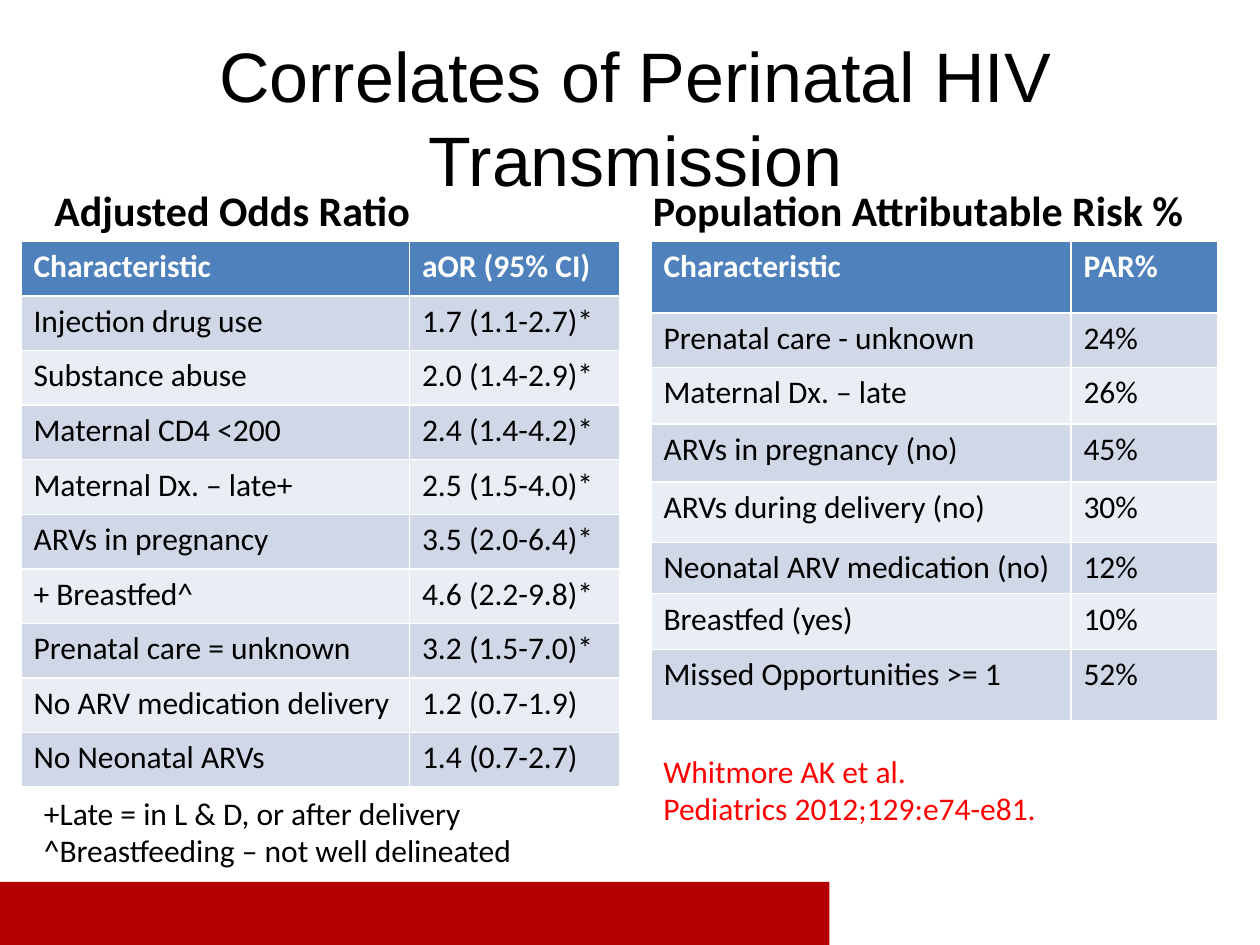
from pptx import Presentation
from pptx.dml.color import RGBColor
from pptx.enum.shapes import MSO_SHAPE
from pptx.enum.text import MSO_ANCHOR, PP_ALIGN
from pptx.util import Inches, Pt

RECTANGLE = MSO_SHAPE.RECTANGLE
TOP, MIDDLE, BOTTOM = MSO_ANCHOR.TOP, MSO_ANCHOR.MIDDLE, MSO_ANCHOR.BOTTOM
LEFT, CENTER = PP_ALIGN.LEFT, PP_ALIGN.CENTER

BLACK = RGBColor(0x00, 0x00, 0x00)
WHITE = RGBColor(0xFF, 0xFF, 0xFF)
CITATION_RED = RGBColor(0xFF, 0x00, 0x00)
FOOTER_RED = RGBColor(0xB4, 0x00, 0x00)
HEADER_BLUE = RGBColor(0x4F, 0x81, 0xBD)
BANDS = [RGBColor(0xE9, 0xED, 0xF4), RGBColor(0xD0, 0xD8, 0xE8)]

# The layout sits on a grid of 12 cells to the inch: 120 columns by 90 rows.
CELL = Inches(1) / 12
TABLE_ROW = 23


def grid(*cells):
    return [round(cell * CELL) for cell in cells]


def write(paragraph, text, color, formats):
    paragraph.text = text
    paragraph.font.color.rgb = color
    for name, value in formats.items():
        setattr(paragraph.font, name, value)


TITLE = {"name": "Arial", "size": Pt(40), "bold": False}
HEADING = {"name": "Calibri", "size": Pt(24), "bold": True}
HEADER = {"name": "Calibri", "size": Pt(18), "bold": True}
BODY = {"name": "Calibri", "size": Pt(18), "bold": False}

odds_ratios = [
    ("Characteristic", "aOR (95% CI)"),
    ("Injection drug use", "1.7 (1.1-2.7)*"),
    ("Substance abuse", "2.0 (1.4-2.9)*"),
    ("Maternal CD4 <200", "2.4 (1.4-4.2)*"),
    ("Maternal Dx. – late+", "2.5 (1.5-4.0)*"),
    ("ARVs in pregnancy", "3.5 (2.0-6.4)*"),
    ("+ Breastfed^", "4.6 (2.2-9.8)*"),
    ("Prenatal care = unknown", "3.2 (1.5-7.0)*"),
    ("No ARV medication delivery", "1.2 (0.7-1.9)"),
    ("No Neonatal ARVs", "1.4 (0.7-2.7)"),
]
attributable_risks = [
    ("Characteristic", "PAR%"),
    ("Prenatal care - unknown", "24%"),
    ("Maternal Dx. – late", "26%"),
    ("ARVs in pregnancy (no)", "45%"),
    ("ARVs during delivery (no)", "30%"),
    ("Neonatal ARV medication (no)", "12%"),
    ("Breastfed (yes)", "10%"),
    ("Missed Opportunities >= 1", "52%"),
]

prs = Presentation()
prs.slide_width, prs.slide_height = grid(120, 90)
slide = prs.slides.add_slide(prs.slide_layouts[6])

# Title, table headings, footnotes and citation
passages = [
    ((4, 3.6, 113, 15), ["Correlates of Perinatal HIV Transmission"],
     MIDDLE, CENTER, BLACK, TITLE),
    ((4, 19, 55, 4), ["Adjusted Odds Ratio"], BOTTOM, LEFT, BLACK, HEADING),
    ((61, 18, 57, 5), ["Population Attributable Risk %"],
     BOTTOM, LEFT, BLACK, HEADING),
    ((3, 75, 54, 8.4),
     ["+Late = in L & D, or after delivery",
      "^Breastfeeding – not well delineated"], TOP, LEFT, BLACK, BODY),
    ((62, 71, 39, 8.4),
     ["Whitmore AK et al.", "Pediatrics 2012;129:e74-e81."],
     TOP, LEFT, CITATION_RED, BODY),
]
for area, lines, anchor, alignment, color, formats in passages:
    frame = slide.shapes.add_textbox(*grid(*area)).text_frame
    frame.word_wrap = True
    frame.vertical_anchor = anchor
    for index, line in enumerate(lines):
        paragraph = frame.add_paragraph() if index else frame.paragraphs[0]
        paragraph.alignment = alignment
        write(paragraph, line, color, formats)

# Both tables: left column, column widths, row heights, records
tables = [
    (2, (37, 20), [5.2] * len(odds_ratios), odds_ratios),
    (62, (40, 14), [6.8, 5.2, 5.4, 5.5, 5.75, 4.9, 5.3, 6.8],
     attributable_risks),
]
for left, widths, heights, records in tables:
    area = grid(left, TABLE_ROW, sum(widths), sum(heights))
    table = slide.shapes.add_table(len(records), len(widths), *area).table
    for column, width in zip(table.columns, grid(*widths)):
        column.width = width
    for row, height in zip(table.rows, grid(*heights)):
        row.height = height
    for r, record in enumerate(records):
        for c, text in enumerate(record):
            cell = table.cell(r, c)
            cell.fill.solid()
            cell.fill.fore_color.rgb = BANDS[r % 2] if r else HEADER_BLUE
            write(cell.text_frame.paragraphs[0], text,
                  BLACK if r else WHITE, BODY if r else HEADER)

footer_bar = slide.shapes.add_shape(RECTANGLE, *grid(0, 84, 79, 6))
footer_bar.shadow.inherit = False
footer_bar.fill.solid()
footer_bar.fill.fore_color.rgb = FOOTER_RED
footer_bar.line.fill.background()

prs.save("out.pptx")
